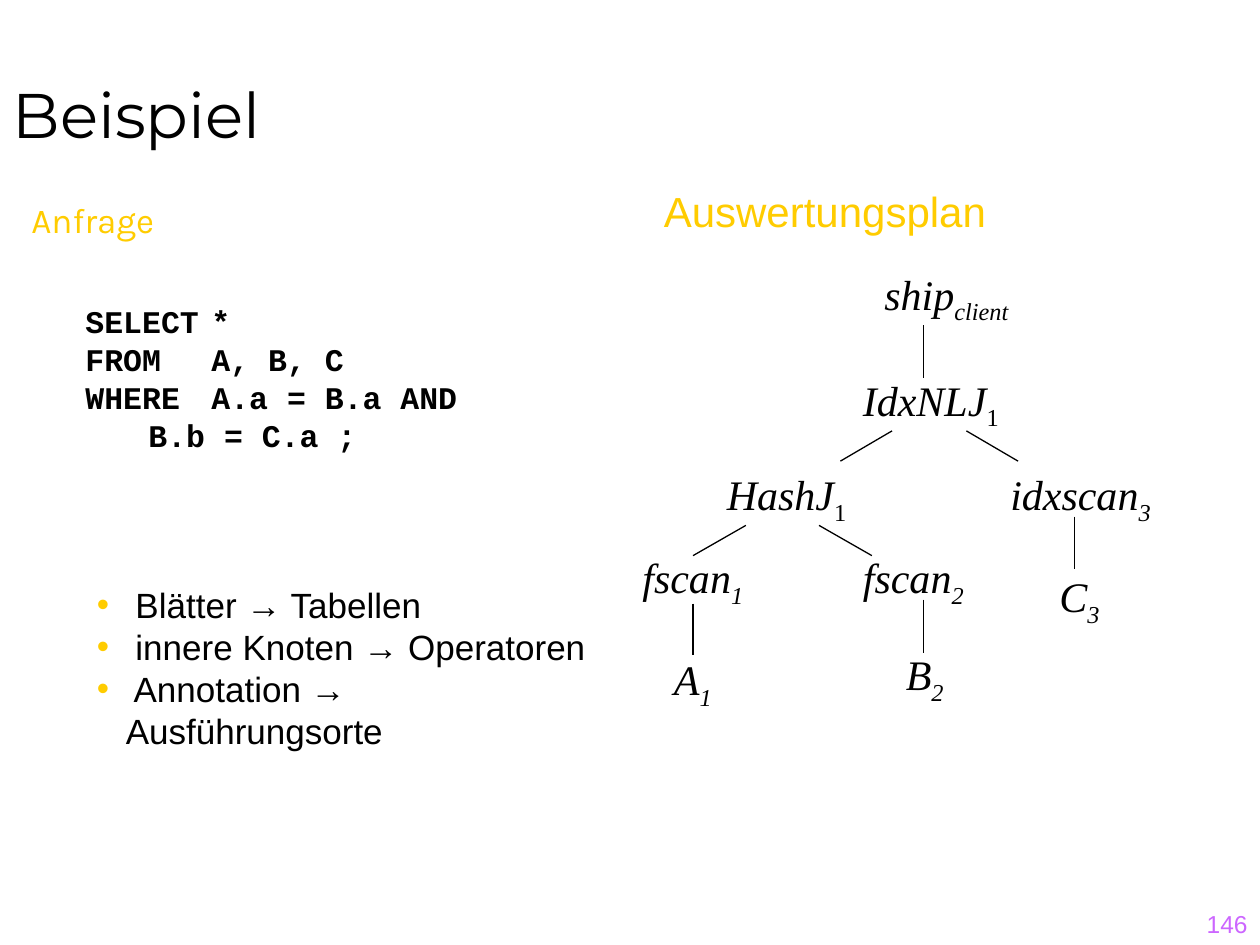
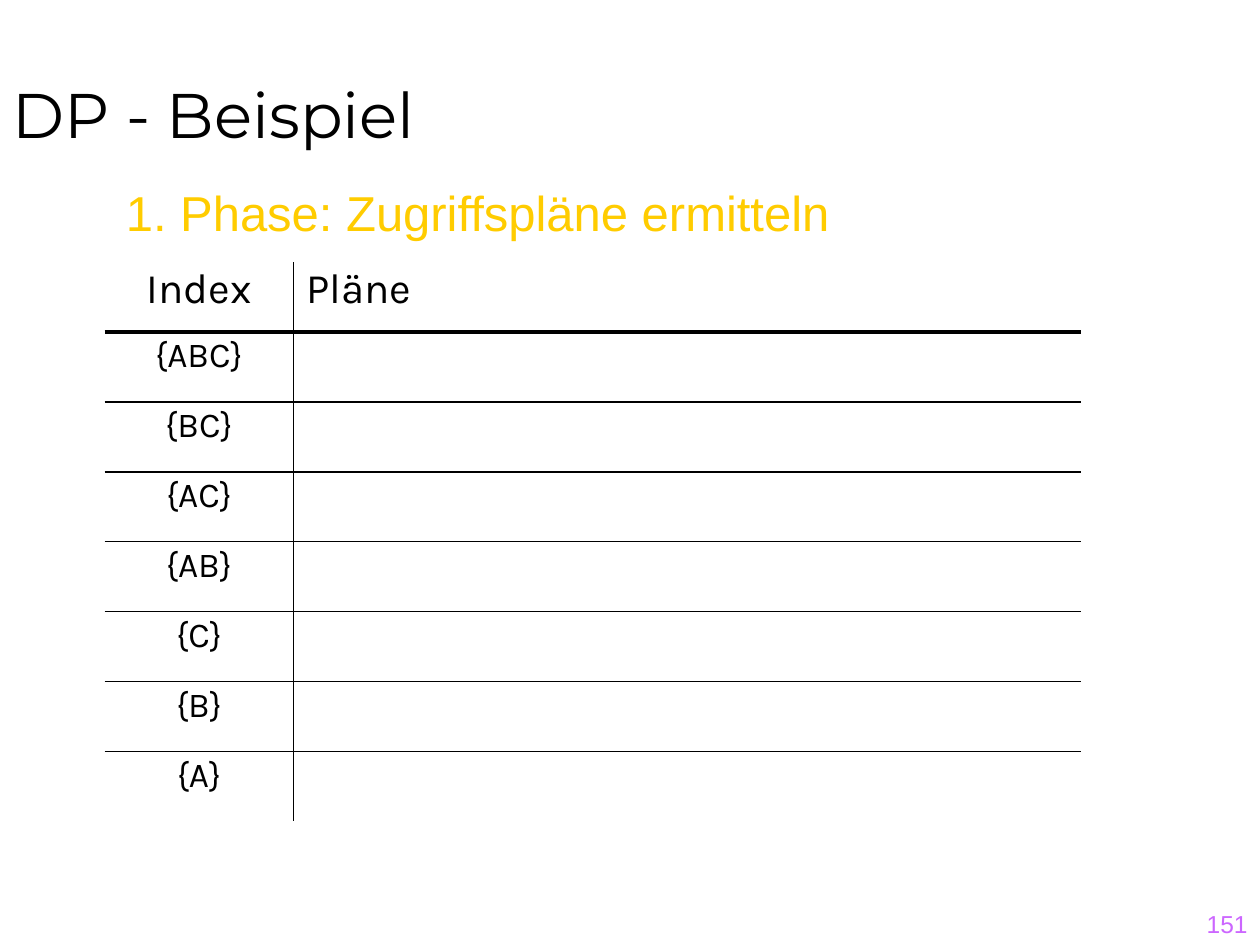
"""Build two lecture slides: a query evaluation plan and a dynamic programming table."""
from lxml.etree import SubElement
from pptx import Presentation
from pptx.dml.color import RGBColor
from pptx.enum.shapes import MSO_CONNECTOR
from pptx.enum.text import MSO_ANCHOR, MSO_AUTO_SIZE, PP_ALIGN
from pptx.oxml.ns import qn
from pptx.util import Inches, Pt

BLACK = RGBColor(0x00, 0x00, 0x00)
GOLD = RGBColor(0xFF, 0xCC, 0x00)
VIOLET = RGBColor(0xCC, 0x66, 0xFF)


def style(para, font, size, color=BLACK):
    para.font.name = font
    para.font.size = Pt(size)
    para.font.color.rgb = color


def add_text(page, place, lines, font, size, color=BLACK, wrap=True):
    box = page.shapes.add_textbox(*[Inches(value) for value in place])
    frame = box.text_frame
    frame.word_wrap = wrap
    frame.text = "\n".join(lines)
    for para in frame.paragraphs:
        style(para, font, size, color)
    return frame


deck = Presentation()
deck.slide_width = Inches(10)
deck.slide_height = Inches(7.5)

pages = []
for heading, number in [("Beispiel", "146"), ("DP - Beispiel", "151")]:
    page = deck.slides.add_slide(deck.slide_layouts[5])
    title = page.shapes.title
    title.left, title.top = Inches(0), Inches(0)
    title.width, title.height = Inches(10), Inches(1.25)
    frame = title.text_frame
    frame.text = heading
    frame.auto_size = MSO_AUTO_SIZE.NONE
    frame.vertical_anchor = MSO_ANCHOR.BOTTOM
    frame.paragraphs[0].alignment = PP_ALIGN.LEFT
    style(frame.paragraphs[0], "Montserrat", 36)
    footer = add_text(page, (7.92, 7, 2.08, 0.5), [number], "Arial", 14, VIOLET)
    footer.vertical_anchor = MSO_ANCHOR.BOTTOM
    footer.paragraphs[0].alignment = PP_ALIGN.RIGHT
    pages.append(page)
plan_page, table_page = pages

query_heading = add_text(plan_page, (0.15, 1.56, 1.58, 0.49), ["Anfrage"], "Karla", 20, GOLD)
query_heading.paragraphs[0].line_spacing = 0.9
query_heading.paragraphs[0].space_before = Pt(4)
plan_heading = add_text(plan_page, (5.17, 1.42, 3, 0.5), ["Auswertungsplan"], "Arial", 24, GOLD)
plan_heading.paragraphs[0].space_before = Pt(4.8)

query_lines = ["SELECT\t*", "FROM\tA, B, C", "WHERE \tA.a = B.a AND", "\tB.b = C.a ;"]
query = add_text(plan_page, (0.58, 2.35, 5.17, 1.3), query_lines, "Courier New", 18)
for para in query.paragraphs:
    para.font.bold = True
    para.line_spacing = Pt(21.7)

legend_lines = [" Blätter → Tabellen", " innere Knoten → Operatoren", " Annotation → Ausführungsorte"]
legend = add_text(plan_page, (0.67, 4.58, 4.17, 1.1), legend_lines, "Arial", 20)
for para in legend.paragraphs:
    properties = para._p.get_or_add_pPr()
    properties.set("marL", str(Inches(0.23)))
    properties.set("indent", str(-Inches(0.23)))
    bullet_color = SubElement(properties, qn("a:buClr"))
    SubElement(bullet_color, qn("a:srgbClr"), val=str(GOLD))
    SubElement(properties, qn("a:buFont"), typeface="Arial")
    SubElement(properties, qn("a:buChar"), char="•")

operators = [
    ("ship", "client", 6.92, 2.08, 1.25),
    ("IdxNLJ", "1", 6.75, 2.92, 1.29),
    ("HashJ", "1", 5.67, 3.67, 1.16),
    ("idxscan", "3", 7.92, 3.67, 1.33),
    ("fscan", "1", 5, 4.33, 1.02),
    ("fscan", "2", 6.75, 4.33, 1.02),
    ("A", "1", 5.25, 5.14, 0.52),
    ("B", "2", 7.09, 5.1, 0.52),
    ("C", "3", 8.31, 4.48, 0.53),
]
for name, index, left, top, width in operators:
    place = (left, top, width, 0.5)
    para = add_text(plan_page, place, [name], "Times New Roman", 24, wrap=False).paragraphs[0]
    para.font.italic = True
    span = para.add_run()
    span.text = index
    span.font._element.set("baseline", "-25000")
    if name in ("IdxNLJ", "HashJ"):
        span.font.italic = False

edges = [
    (7.33, 2.58, 7.33, 3),
    (7.08, 3.42, 6.67, 3.66),
    (7.67, 3.42, 8.08, 3.66),
    (5.92, 4.17, 5.5, 4.41),
    (6.5, 4.17, 6.92, 4.41),
    (5.5, 4.79, 5.5, 5.2),
    (7.33, 4.76, 7.33, 5.18),
    (8.53, 4.1, 8.53, 4.52),
]
for ends in edges:
    edge = plan_page.shapes.add_connector(MSO_CONNECTOR.STRAIGHT, *[Inches(value) for value in ends])
    edge.line.color.rgb = BLACK
    edge.line.width = Pt(0.75)
    SubElement(edge._element.spPr, qn("a:effectLst"))

phase = ["1. Phase: Zugriffspläne ermitteln"]
add_text(table_page, (0.9, 1.4, 5.81, 0.57), phase, "Arial", 28, GOLD, wrap=False)

rows = ["Index", "{ABC}", "{BC}", "{AC}", "{AB}", "{C}", "{B}", "{A}"]
last = len(rows) - 1
plans = table_page.shapes.add_table(
    len(rows), 2, Inches(0.83), Inches(2.08), Inches(7.75), Inches(4.44)
).table
plans.first_row = False
plans.horz_banding = False
plans.columns[0].width = Inches(1.5)
plans.columns[1].width = Inches(6.25)

for row, label in enumerate(rows):
    for column, text in enumerate([label, "Pläne" if row == 0 else ""]):
        cell = plans.cell(row, column)
        cell.text = text
        para = cell.text_frame.paragraphs[0]
        style(para, "Karla", 24 if row == 0 else 20)
        para.alignment = PP_ALIGN.LEFT if column else PP_ALIGN.CENTER
        para.line_spacing = 0.9
        para.space_before = Pt(4.8 if row == 0 else 4)
        borders = {
            "a:lnL": 1 if column == 1 else 0,
            "a:lnR": 1 if column == 0 else 0,
            "a:lnT": {0: 0, 1: 3}.get(row, 1),
            "a:lnB": {0: 3, last: 0}.get(row, 1),
        }
        cell_properties = cell._tc.get_or_add_tcPr()
        for tag, points in borders.items():
            border = SubElement(cell_properties, qn(tag), w=str(Pt(points)))
            if points:
                fill = SubElement(border, qn("a:solidFill"))
                SubElement(fill, qn("a:srgbClr"), val=str(BLACK))
            else:
                SubElement(border, qn("a:noFill"))
        cell.fill.background()

deck.save("out.pptx")
